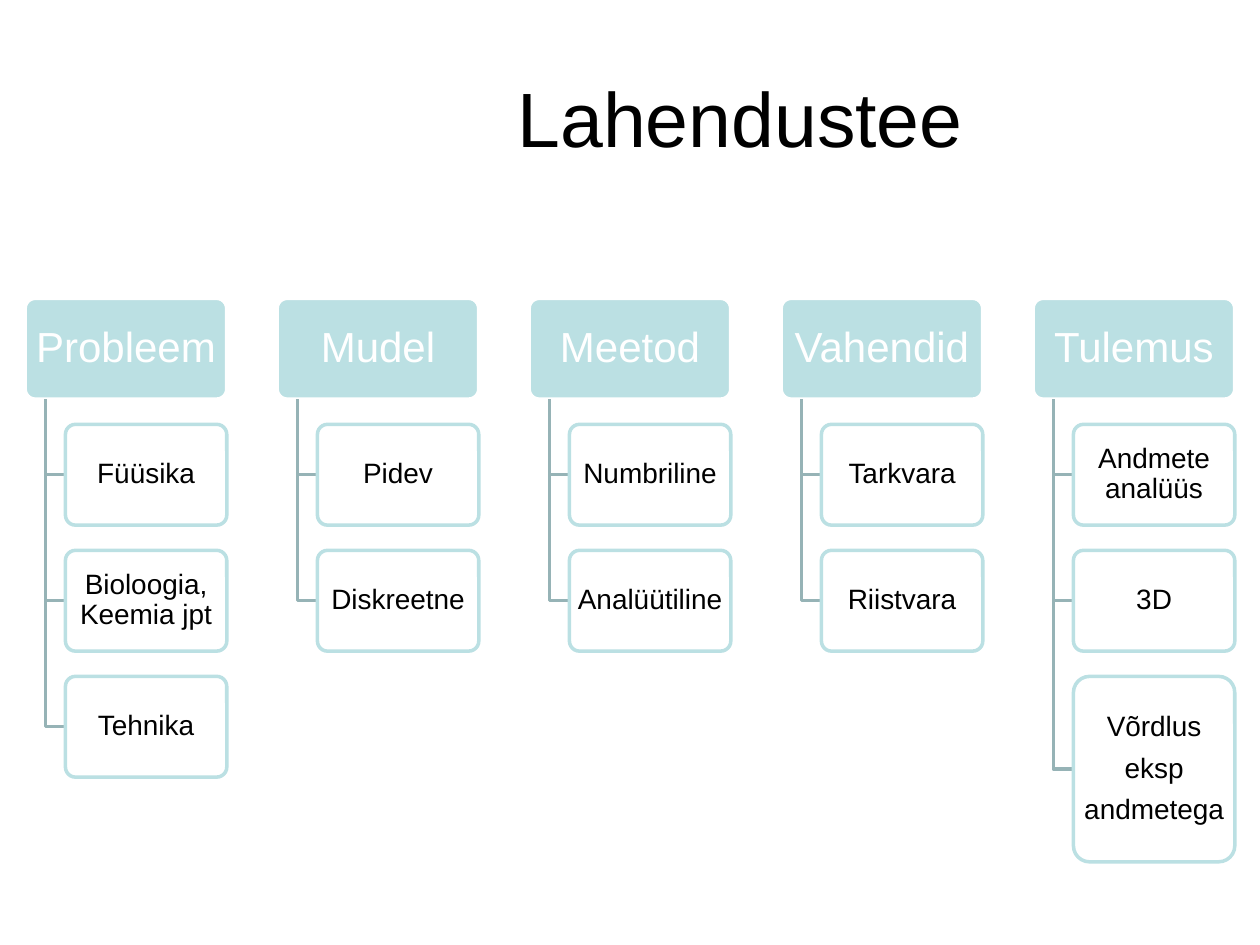
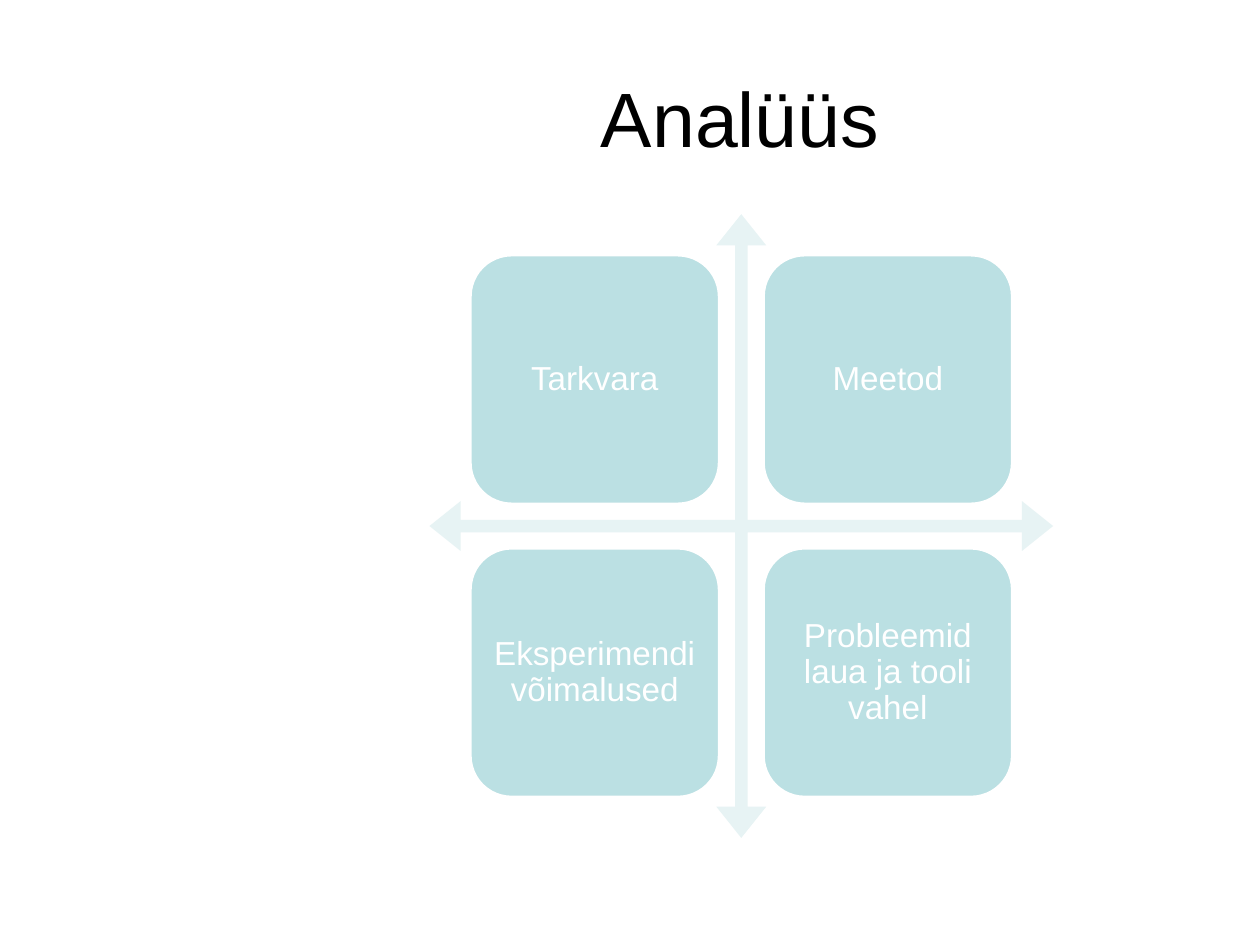
from pptx import Presentation
from pptx.dml.color import RGBColor
from pptx.enum.shapes import MSO_SHAPE
from pptx.enum.text import MSO_ANCHOR, PP_ALIGN
from pptx.util import Pt

STEPS = [
    ("Probleem", ["Füüsika", "Bioloogia, Keemia jpt", "Tehnika"]),
    ("Mudel", ["Pidev", "Diskreetne"]),
    ("Meetod", ["Numbriline", "Analüütiline"]),
    ("Vahendid", ["Tarkvara", "Riistvara"]),
    ("Tulemus", ["Andmete analüüs", "3D", "Võrdlus\neksp\nandmetega"]),
]
PARTS = [
    ["Tarkvara", "Meetod"],
    ["Eksperimendi võimalused", "Probleemid laua ja tooli vahel"],
]

TEAL = RGBColor(0xBB, 0xE0, 0xE3)
PALE = RGBColor(0xE7, 0xF3, 0xF4)
GREY = RGBColor(0x96, 0xB3, 0xB6)
WHITE = RGBColor(0xFF, 0xFF, 0xFF)
BLACK = RGBColor(0, 0, 0)

ROUND = MSO_SHAPE.ROUNDED_RECTANGLE
QUAD = MSO_SHAPE.QUAD_ARROW
CENTER = PP_ALIGN.CENTER
MIDDLE = MSO_ANCHOR.MIDDLE

LEFT, TOP, PITCH = 14.4, 170.5, 144
HEAD_W, HEAD_H = 115.2, 57.6
ITEM_X, ITEM_W, ITEM_STEP = 23, 92.2, 72
STEM_X = 11.5
TALL = 106
ROUNDING = 0.1

CROSS_X, CROSS_Y, CROSS = 245.4, 122.4, 356.4
TILE, TILE_STEP = 142.6, 167.5


def write(shape, text, size=16, color=BLACK, pad=(7.2, 3.6), line=0.9, gap=6.3):
    frame = shape.text_frame
    frame.text = text
    frame.word_wrap = True
    frame.vertical_anchor = MIDDLE
    frame.margin_left = frame.margin_right = Pt(pad[0])
    frame.margin_top = frame.margin_bottom = Pt(pad[1])
    for rank, para in enumerate(frame.paragraphs):
        para.alignment = CENTER
        para.line_spacing = line
        para.space_before = Pt(gap if rank else 0)
        para.font.name = "Arial"
        para.font.size = Pt(size)
        para.font.color.rgb = color


def add_page(deck, title):
    page = deck.slides.add_slide(deck.slide_layouts[5])
    head = page.shapes.title
    head.left, head.top, head.width, head.height = Pt(162), Pt(21.6), Pt(522), Pt(90)
    write(head, title, size=44, line=1)
    return page.shapes


def add_box(shapes, kind, place, fill, edge=None, bends=()):
    box = shapes.add_shape(kind, *map(Pt, place))
    box.shadow.inherit = False
    box.fill.solid()
    box.fill.fore_color.rgb = fill
    if edge is None:
        box.line.fill.background()
    else:
        box.line.color.rgb = edge
        box.line.width = Pt(2)
    for rank, bend in enumerate(bends):
        box.adjustments[rank] = bend
    return box


def add_stem(shapes, x, y, end_x, end_y):
    pen = shapes.build_freeform(Pt(x), Pt(y))
    pen.add_line_segments([(Pt(x), Pt(end_y)), (Pt(end_x), Pt(end_y))], close=False)
    stem = pen.convert_to_shape()
    stem.shadow.inherit = False
    stem.fill.background()
    stem.line.color.rgb = GREY
    stem.line.width = Pt(2)


def draw_steps(deck):
    shapes = add_page(deck, "Lahendustee")
    for col, (name, items) in enumerate(STEPS):
        x = LEFT + col * PITCH
        head = add_box(shapes, ROUND, (x, TOP, HEAD_W, HEAD_H), TEAL, WHITE, [ROUNDING])
        write(head, name, size=24, color=WHITE, pad=(3, 2.4))
        for row, item in enumerate(items, 1):
            y = TOP + row * ITEM_STEP
            high = TALL if "\n" in item else HEAD_H
            add_stem(shapes, x + STEM_X, TOP + HEAD_H, x + ITEM_X, y + high / 2)
            place = (x + ITEM_X, y, ITEM_W, high)
            box = add_box(shapes, ROUND, place, WHITE, TEAL, [ROUNDING])
            write(box, item, pad=(2, 1.5))


def draw_parts(deck):
    shapes = add_page(deck, "Analüüs")
    add_box(shapes, QUAD, (CROSS_X, CROSS_Y, CROSS, CROSS), PALE, bends=[0.02, 0.04, 0.05])
    inset = (CROSS - TILE_STEP - TILE) / 2
    for row, names in enumerate(PARTS):
        for col, name in enumerate(names):
            x = CROSS_X + inset + col * TILE_STEP
            y = CROSS_Y + inset + row * TILE_STEP
            tile = add_box(shapes, ROUND, (x, y, TILE, TILE), TEAL, WHITE)
            write(tile, name, size=19, color=WHITE, pad=(5.6, 5.6))


def main():
    deck = Presentation()
    deck.slide_width, deck.slide_height = Pt(720), Pt(540)
    draw_steps(deck)
    draw_parts(deck)
    deck.save("out.pptx")


if __name__ == "__main__":
    main()
